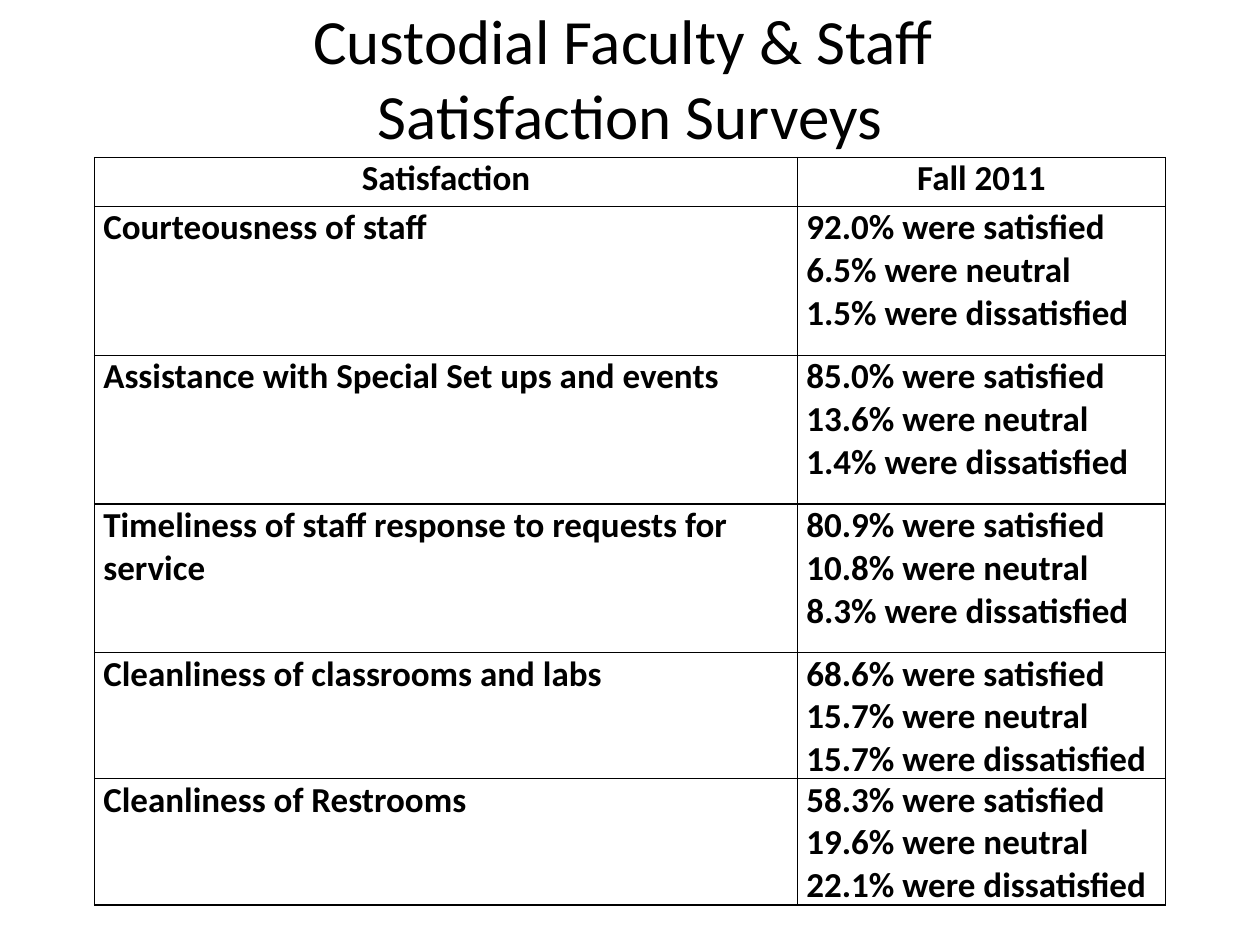
from dataclasses import dataclass

from lxml.etree import SubElement
from pptx import Presentation
from pptx.dml.color import RGBColor
from pptx.enum.text import MSO_ANCHOR, PP_ALIGN
from pptx.oxml.ns import qn
from pptx.slide import Slide
from pptx.table import _Cell
from pptx.text.text import _Paragraph
from pptx.util import Inches, Pt


@dataclass(frozen=True)
class Theme:
    font: str = "Calibri"
    ink: RGBColor = RGBColor(0, 0, 0)
    paper: RGBColor = RGBColor(255, 255, 255)
    title_size: Pt = Pt(36)
    table_size: Pt = Pt(20)
    border: Pt = Pt(1)


@dataclass(frozen=True)
class SurveyItem:
    question: str
    satisfied: float
    neutral: float
    dissatisfied: float
    height: float

    def answers(self) -> list[str]:
        return [
            f"{self.satisfied:.1f}% were satisfied",
            f"{self.neutral:.1f}% were neutral",
            f"{self.dissatisfied:.1f}% were dissatisfied",
        ]


THEME = Theme()
TITLE_LINES = ["Custodial Faculty & Staff ", "Satisfaction Surveys"]
HEADINGS = ["Satisfaction", "Fall 2011"]
COLUMN_WIDTHS = [5.58, 2.92]
HEADER_HEIGHT = 0.39
SURVEY = [
    SurveyItem("Courteousness of staff", 92.0, 6.5, 1.5, 1.18),
    SurveyItem("Assistance with Special Set ups and events", 85.0, 13.6, 1.4, 1.18),
    SurveyItem("Timeliness of staff response to requests for service", 80.9, 10.8, 8.3, 1.18),
    SurveyItem("Cleanliness of classrooms and labs", 68.6, 15.7, 15.7, 0.95),
    SurveyItem("Cleanliness of Restrooms", 58.3, 19.6, 22.1, 0.95),
]


def add_text(paragraph: _Paragraph, text: str, size: Pt, bold: bool = False) -> None:
    run = paragraph.add_run()
    run.text = text
    run.font.name = THEME.font
    run.font.size = size
    run.font.bold = bold
    run.font.color.rgb = THEME.ink


def add_borders(cell: _Cell) -> None:
    properties = cell._tc.get_or_add_tcPr()
    for side in ("lnL", "lnR", "lnT", "lnB"):
        line = SubElement(properties, qn(f"a:{side}"), w=str(THEME.border))
        fill = SubElement(line, qn("a:solidFill"))
        SubElement(fill, qn("a:srgbClr"), val=str(THEME.ink))


def fill_cell(cell: _Cell, lines: list[str], align: PP_ALIGN) -> None:
    cell.margin_left = cell.margin_right = Inches(0.07)
    cell.margin_top = cell.margin_bottom = 0
    cell.vertical_anchor = MSO_ANCHOR.TOP
    add_borders(cell)
    cell.fill.solid()
    cell.fill.fore_color.rgb = THEME.paper
    for index, line in enumerate(lines):
        frame = cell.text_frame
        paragraph = frame.add_paragraph() if index else frame.paragraphs[0]
        paragraph.alignment = align
        add_text(paragraph, line, THEME.table_size, bold=True)


def draw_title(slide: Slide) -> None:
    title = slide.shapes.add_textbox(Inches(0.5), Inches(0.3), Inches(9), Inches(0.62))
    frame = title.text_frame
    frame.word_wrap = True
    frame.vertical_anchor = MSO_ANCHOR.MIDDLE
    paragraph = frame.paragraphs[0]
    paragraph.alignment = PP_ALIGN.CENTER
    for index, line in enumerate(TITLE_LINES):
        if index:
            paragraph.add_line_break()
        add_text(paragraph, line, THEME.title_size)


def draw_survey(slide: Slide) -> None:
    heights = [HEADER_HEIGHT] + [item.height for item in SURVEY]
    table = slide.shapes.add_table(
        len(heights), len(COLUMN_WIDTHS), Inches(0.75), Inches(1.25),
        Inches(sum(COLUMN_WIDTHS)), Inches(sum(heights)),
    ).table
    for column, width in zip(table.columns, COLUMN_WIDTHS):
        column.width = Inches(width)
    for row, height in zip(table.rows, heights):
        row.height = Inches(height)

    # Header row
    for column, heading in enumerate(HEADINGS):
        fill_cell(table.cell(0, column), [heading], PP_ALIGN.CENTER)

    # One row per survey question
    for row, item in enumerate(SURVEY, start=1):
        fill_cell(table.cell(row, 0), [item.question], PP_ALIGN.LEFT)
        fill_cell(table.cell(row, 1), item.answers(), PP_ALIGN.LEFT)


def main() -> None:
    deck = Presentation()
    deck.slide_width, deck.slide_height = Inches(10), Inches(7.5)
    slide = deck.slides.add_slide(deck.slide_layouts[6])
    draw_title(slide)
    draw_survey(slide)
    deck.save("out.pptx")


if __name__ == "__main__":
    main()
